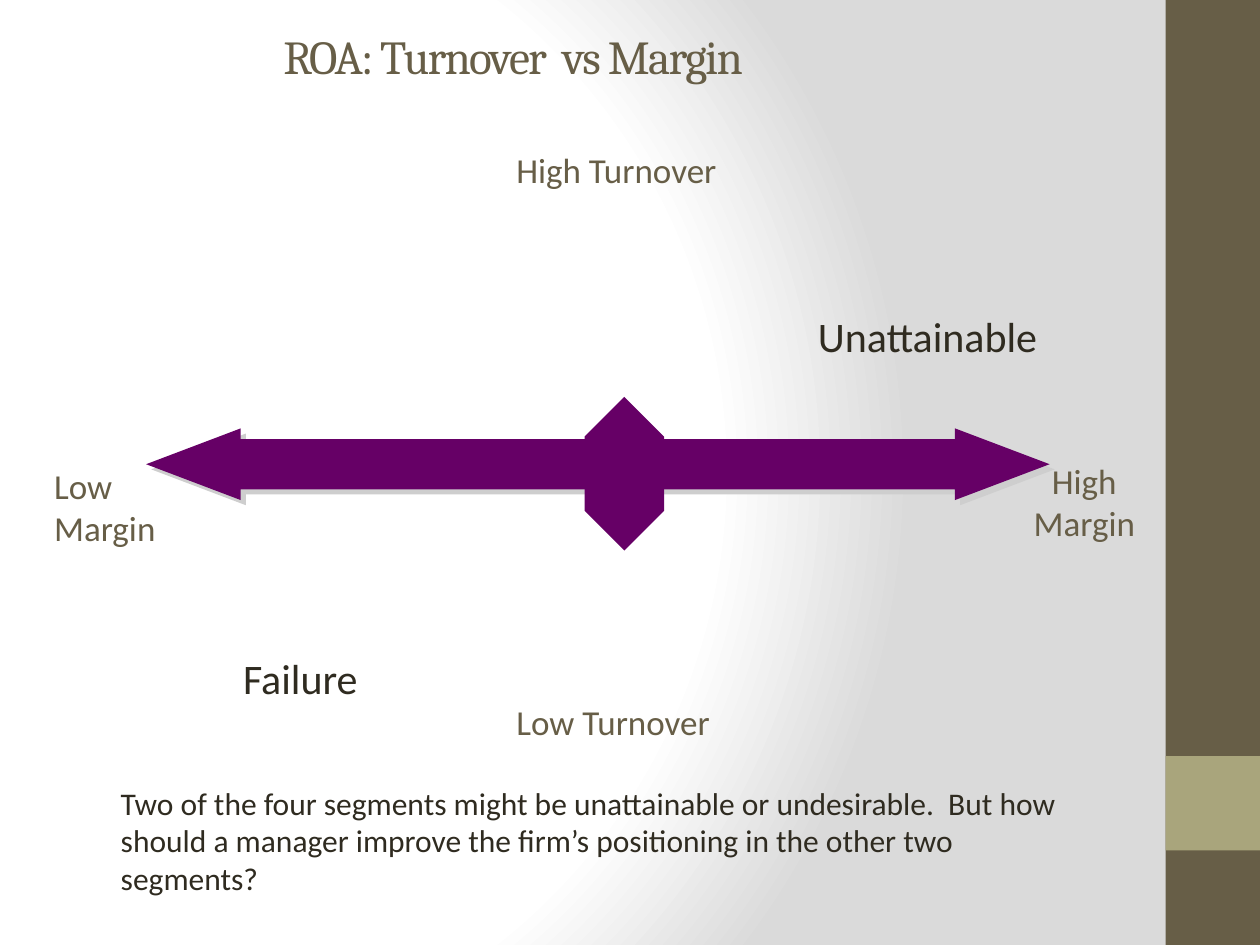
from lxml import etree
from pptx import Presentation
from pptx.dml.color import RGBColor
from pptx.enum.shapes import MSO_SHAPE as Shape
from pptx.enum.text import MSO_ANCHOR as Anchor, PP_ALIGN as Align
from pptx.oxml import parse_xml
from pptx.oxml.ns import nsdecls, qn
from pptx.util import Pt

BROWN = RGBColor(0x67, 0x5E, 0x47)
OLIVE = RGBColor(0xA9, 0xA5, 0x7C)
DARK = RGBColor(0x2F, 0x2B, 0x20)
PURPLE = RGBColor(0x66, 0x00, 0x66)

deck = Presentation()
deck.slide_width, deck.slide_height = Pt(720), Pt(540)
page = deck.slides.add_slide(deck.slide_layouts[6])


def add_block(kind, place, color):
    block = page.shapes.add_shape(kind, *map(Pt, place))
    block.shadow.inherit = False
    block.fill.solid()
    block.fill.fore_color.rgb = color
    block.line.fill.background()
    return block


def add_text(lines, place, size, color, align=Align.LEFT, wrap=False, face="Calibri"):
    box = page.shapes.add_textbox(*map(Pt, place))
    frame = box.text_frame
    frame.word_wrap = wrap
    frame.text = lines
    look = {"size": Pt(size), "name": face}
    for para in frame.paragraphs:
        para.alignment = align
        for span in para.runs:
            for key, value in look.items():
                setattr(span.font, key, value)
            span.font.color.rgb = color
    return frame


# Background: radial gradient from white to grey
back = page.background.fill
back.gradient()
gradient = page.background._cSld.find(".//" + qn("a:gradFill"))
for child in list(gradient):
    gradient.remove(child)
stops = etree.SubElement(gradient, qn("a:gsLst"))
for position, tone in ((0, "FFFFFF"), (75, "FFFFFF"), (100, "DADADA")):
    stop = etree.SubElement(stops, qn("a:gs"), pos=str(position * 1000))
    etree.SubElement(stop, qn("a:srgbClr"), val=tone)
route = etree.SubElement(gradient, qn("a:path"), attrib={"path": "circle"})
etree.SubElement(route, qn("a:fillToRect"), l="20000", t="50000", r="100000", b="50000")

# Side band
add_block(Shape.RECTANGLE, (666, 0, 54, 540), BROWN)
add_block(Shape.RECTANGLE, (666, 432, 54, 54), OLIVE)

# Title
title = add_text("ROA: Turnover  vs Margin", (154.8, 11.5, 547.9, 41), 27, BROWN,
                 wrap=True, face="Cambria")
title.vertical_anchor = Anchor.MIDDLE
title.paragraphs[0].runs[0].font._element.set("spc", "-100")

# Axis labels
add_text("Low\nMargin", (23.8, 262.1, 75.6, 56.9), 20, BROWN)
add_text("High\nMargin", (581.8, 259.2, 75.6, 56.9), 20, BROWN, Align.CENTER)
add_text("Low Turnover", (288, 396.7, 126, 31), 20, BROWN)
add_text("High Turnover", (288, 81.4, 129.6, 31), 20, BROWN)

# Axis arrows
margin_axis = add_block(Shape.LEFT_RIGHT_ARROW, (83.5, 244.8, 516.3, 41), PURPLE)
turnover_axis = add_block(Shape.UP_DOWN_ARROW, (334.1, 226.8, 45.4, 87.8), PURPLE)
for axis, shaft, head in ((margin_axis, 0.7, 1.32), (turnover_axis, 0.68, 1.07)):
    axis.adjustments[0], axis.adjustments[1] = shaft, head
effects = margin_axis._element.spPr.find(qn("a:effectLst"))
effects.append(parse_xml(
    f'<a:outerShdw {nsdecls("a")} dist="{Pt(4.2)}" dir="2700000" algn="ctr" rotWithShape="0">'
    '<a:srgbClr val="CECECE"/></a:outerShdw>'))

# Segments
add_text("Failure", (131.8, 369.4, 80.6, 36), 24, DARK)
add_text("Unattainable", (376.6, 174.2, 223.2, 36), 24, DARK, Align.RIGHT, wrap=True)

# Closing question
add_text("Two of the four segments might be unattainable or undesirable.  But how should "
         "a manager improve the firm’s positioning in the other two segments?",
         (61.9, 444.2, 568.1, 72.7), 18, DARK, wrap=True)

deck.save("out.pptx")
